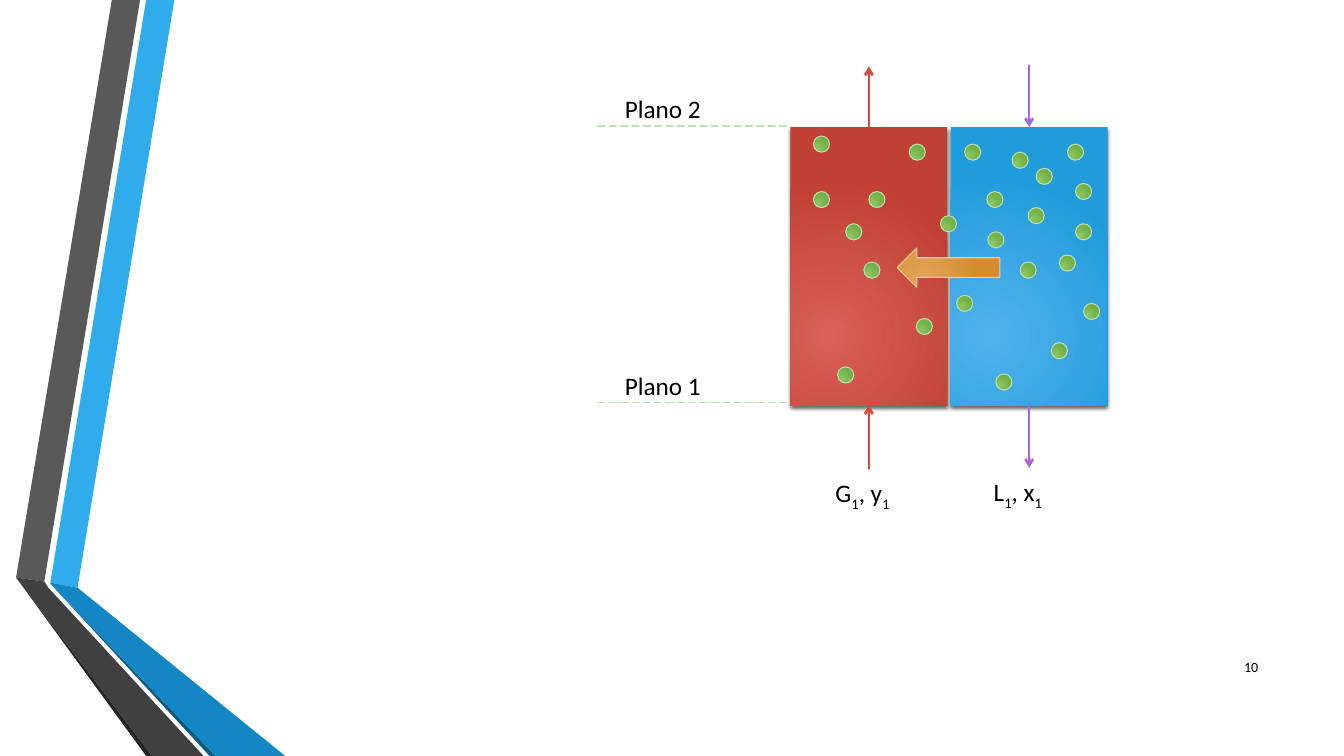
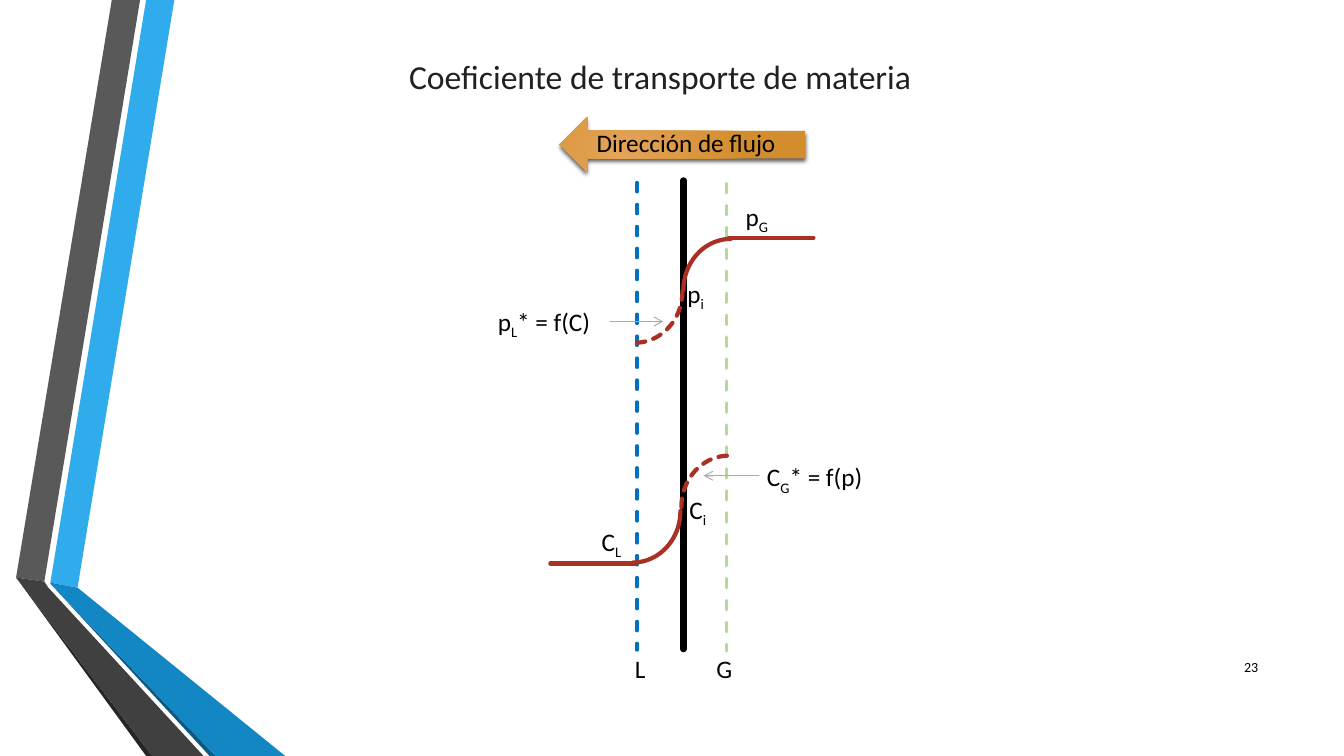
from lxml import etree
from pptx import Presentation
from pptx import util as u
from pptx.dml.color import RGBColor
from pptx.enum import dml, shapes, text
from pptx.oxml.ns import qn

COLUMNS, ROWS = 133.33, 75
RED, BLUE = ("D96157", "C04033"), ("51B3ED", "219CDB")
GREEN, ORANGE = ("8CC764", "72AF45"), ("E4A559", "D38D2D")
GAS, LIQUID, CURVE = "D64A3B", "A666E1", "A93023"
PALE_GREEN, BLACK, GREY = "C0DEB3", "000000", "ABABAB"
BANDS = [
    ("30ACEC", [(5, 57.8), (7.7, 58.3), (17.3, 0), (14.5, 0)]),
    ("595959", [(13.9, 0), (11.1, 0), (1.6, 57.3), (4.4, 57.7)]),
    ("262626", [(1.6, 57.3), (14.5, 75), (15.1, 75)]),
    ("0C5A82", [(5, 57.9), (20.8, 75), (21.4, 75)]),
    ("1287C3", [(5, 57.9), (21.4, 75), (28.3, 75), (7.7, 58.3), (5, 57.8)]),
    ("404040", [(20.2, 75), (4.8, 58.3), (4.4, 57.7), (1.6, 57.3), (15.1, 75)]),
]
DOTS = [
    (95.7, 14.3), (100.4, 15.1), (105.9, 14.3), (97.9, 19), (80.7, 19),
    (106.7, 18.2), (102, 20.6), (102.8, 16.7), (101.2, 26), (106.7, 22.2),
    (107.5, 30.1), (83.1, 36.4), (94.9, 29.3), (98, 23), (86.2, 19),
    (104.3, 34), (85.7, 26), (80.7, 13.5), (98.8, 37.1), (83.9, 22.2),
    (90.9, 31.6), (90.2, 14.3), (93.3, 21.4), (105.1, 25.3),
]


def colour(code):
    """Turn a hex string into a colour."""
    return RGBColor.from_string(code)


def apply(target, values):
    """Set every attribute named in a dict."""
    for name, value in values.items():
        setattr(target, name, value)


class Deck:
    """Hold the shared style and the current slide."""

    def __init__(self):
        """Start an empty widescreen presentation."""
        self.show = Presentation()
        apply(self.show, {"slide_width": u.Inches(13.333), "slide_height": u.Inches(7.5)})

    def x(self, columns):
        """Convert columns to a length."""
        return round(self.show.slide_width * columns / COLUMNS)

    def y(self, rows):
        """Convert rows to a length."""
        return round(self.show.slide_height * rows / ROWS)

    def box(self, left, top, width, height):
        """Convert a grid box to lengths."""
        return self.x(left), self.y(top), self.x(width), self.y(height)

    def start(self, number):
        """Add a slide with its bands and page number."""
        self.slide = self.show.slides.add_slide(self.show.slide_layouts[6])
        for fill, outline in BANDS:
            points = [(self.x(column), self.y(row)) for column, row in outline]
            builder = self.slide.shapes.build_freeform(*points[0])
            builder.add_line_segments(points[1:], close=True)
            band = builder.convert_to_shape()
            band.shadow.inherit = False
            band.fill.solid()
            band.fill.fore_color.rgb = colour(fill)
            band.line.fill.background()
        self.label((119.8, 64.2, 6, 4), number, size=10, align=text.PP_ALIGN.RIGHT,
                   anchor=text.MSO_ANCHOR.MIDDLE)

    def stroke(self, line, code, width, dash=None):
        """Style a line or an outline."""
        line.fill.solid()
        line.fill.fore_color.rgb = colour(code)
        apply(line, {"width": u.Pt(width), "dash_style": dash})

    def round_ends(self, item):
        """Give a line round ends and return its element."""
        ln = item._element.spPr.find(qn("a:ln"))
        ln.set("cap", "rnd")
        return ln

    def glossy(self, kind, place, stops, edge=None, shadow=False):
        """Add a shape with a radial gradient lit from the lower left."""
        shape = self.slide.shapes.add_shape(kind, *self.box(*place))
        shape.fill.gradient()
        for position, (stop, code) in enumerate(zip(shape.fill.gradient_stops, stops)):
            stop.color.rgb = colour(code)
            stop.position = position
        gradient = shape._element.spPr.find(qn("a:gradFill"))
        gradient.remove(gradient.find(qn("a:lin")))
        glow = etree.SubElement(gradient, qn("a:path"), path="circle")
        etree.SubElement(glow, qn("a:fillToRect"), l="25000", t="75000", r="75000", b="25000")
        if edge:
            self.stroke(shape.line, edge, 0.75)
        else:
            shape.line.fill.background()
        shape.shadow.inherit = False
        if shadow:
            effects = shape._element.spPr.find(qn("a:effectLst"))
            cast = etree.SubElement(effects, qn("a:outerShdw"), blurRad=str(u.Pt(3)),
                                    dist=str(u.Pt(2)), dir="5400000", rotWithShape="0")
            tint = etree.SubElement(cast, qn("a:srgbClr"), val=BLACK)
            etree.SubElement(tint, qn("a:alpha"), val="64000")
        return shape

    def arc(self, place, turn, dash=None):
        """Add a quarter of a concentration curve."""
        curve = self.slide.shapes.add_shape(shapes.MSO_SHAPE.ARC, *self.box(*place))
        curve.rotation = turn
        curve.fill.background()
        curve.shadow.inherit = False
        self.stroke(curve.line, CURVE, 3, dash)
        self.round_ends(curve)

    def line(self, start, end, code, width, dash=None, arrow=False):
        """Add a straight line, with an arrowhead if asked."""
        line = self.slide.shapes.add_connector(
            shapes.MSO_CONNECTOR.STRAIGHT, self.x(start[0]), self.y(start[1]),
            self.x(end[0]), self.y(end[1]))
        self.stroke(line.line, code, width, dash)
        ln = self.round_ends(line)
        if arrow:
            etree.SubElement(ln, qn("a:tailEnd"), type="arrow")
        etree.SubElement(line._element.spPr, qn("a:effectLst"))
        return line

    def label(self, place, *parts, size=18, code=BLACK, wrap=True,
              align=text.PP_ALIGN.LEFT, anchor=text.MSO_ANCHOR.TOP):
        """Add text whose every second part is a subscript."""
        frame = self.slide.shapes.add_textbox(*self.box(*place)).text_frame
        apply(frame, {"word_wrap": wrap, "vertical_anchor": anchor})
        paragraph = frame.paragraphs[0]
        paragraph.alignment = align
        for index, part in enumerate(parts):
            run = paragraph.add_run()
            run.text = part
            apply(run.font, {"size": u.Pt(size), "name": "Calibri"})
            run.font.color.rgb = colour(code)
            if index % 2:
                run._r.get_or_add_rPr().set("baseline", "-25000")


def absorption(deck):
    """Draw the gas and liquid streams between two planes."""
    deck.start("10")
    kind = shapes.MSO_SHAPE
    gas, liquid = [deck.glossy(kind.RECTANGLE, (left, 12.6, 15.6, 27.6), stops, shadow=True)
                   for left, stops in ((78.4, RED), (94.3, BLUE))]
    for left, top in DOTS:
        deck.glossy(kind.OVAL, (left, top, 1.6, 1.6), GREEN, PALE_GREEN)
    deck.glossy(kind.LEFT_ARROW, (89, 24.6, 10.2, 3.9), ORANGE, "EECCAF")

    gas_x, liquid_x = 86.2, 102.1
    gas_out = deck.line((gas_x, 12.6), (gas_x, 6.6), GAS, 1.75, arrow=True)
    gas_out.begin_connect(gas, 0)
    gas_in = deck.line((gas_x, 46.5), (gas_x, 40.2), GAS, 1.75, arrow=True)
    gas_in.end_connect(gas, 2)
    liquid_in = deck.line((liquid_x, 6.5), (liquid_x, 12.6), LIQUID, 1.75, arrow=True)
    liquid_in.end_connect(liquid, 0)
    liquid_out = deck.line((liquid_x, 40.2), (liquid_x, 46.4), LIQUID, 1.75, arrow=True)
    liquid_out.begin_connect(liquid, 2)

    for plane, row in (("Plano 2", 12.5), ("Plano 1", 39.9)):
        deck.line((59.3, row), (78.2, row), PALE_GREEN, 0.75, dml.MSO_LINE.LONG_DASH)
        deck.label((61, row - 3.7, 14.2, 4), plane)
    deck.label((81.9, 46.9, 8.7, 4), "G", "1", ", y", "1")
    deck.label((97.6, 46.8, 8.7, 4), "L", "1", ", x", "1")


def transport(deck):
    """Draw the profiles on both sides of the interface."""
    deck.start("23")
    deck.label((39.6, 3.2, 54, 6.8), "Coeficiente de transporte de materia",
               size=24, code="212121", anchor=text.MSO_ANCHOR.BOTTOM)
    deck.glossy(shapes.MSO_SHAPE.LEFT_ARROW, (55.5, 11.6, 24.4, 5.5), ORANGE, shadow=True)
    deck.label((58.2, 12.1, 20.3, 4), "Dirección de flujo", wrap=False)

    dash, dots = dml.MSO_LINE.DASH, dml.MSO_LINE.SQUARE_DOT
    deck.line((67.8, 17.9), (67.8, 64.4), BLACK, 4.5)
    deck.line((72.1, 18.2), (72.1, 64.6), "B3DB95", 2.25, dash)
    deck.line((63.2, 18.1), (63.2, 64.5), "0070C0", 2.25, dash)
    for left, top, turn, style in ((57.9, 24.2, 90, dots), (67.4, 24.1, 270, None),
                                   (67.2, 45.6, 270, dots), (57.7, 46, 90, None)):
        deck.arc((left, top, 10.2, 9.4), turn, style)
    for left, row in ((72.3, 23.6), (54.6, 55.9)):
        deck.line((left, row), (left + 8.4, row), CURVE, 3)
    for start, end, row in ((60.5, 65.8, 31.9), (75.3, 69.8, 47.2)):
        deck.line((start, row), (end, row), GREY, 0.75, arrow=True)

    for left, top, width, parts in (
            (73, 19.5, 5, ("p", "G")), (67.2, 27.1, 5, ("p", "i")),
            (48.4, 29.9, 12.5, ("p", "L", "* = f(C)")), (58.7, 51.7, 5, ("C", "L")),
            (67.4, 48.5, 5, ("C", "i")), (75.1, 45.3, 13, ("C", "G", "* = f(p)")),
            (62, 64.3, 4, ("L",)), (70.1, 64.3, 4, ("G",))):
        deck.label((left, top, width, 4), *parts, wrap=False)


def main():
    """Build both slides and save them."""
    deck = Deck()
    absorption(deck)
    transport(deck)
    deck.show.save("out.pptx")


if __name__ == "__main__":
    main()
